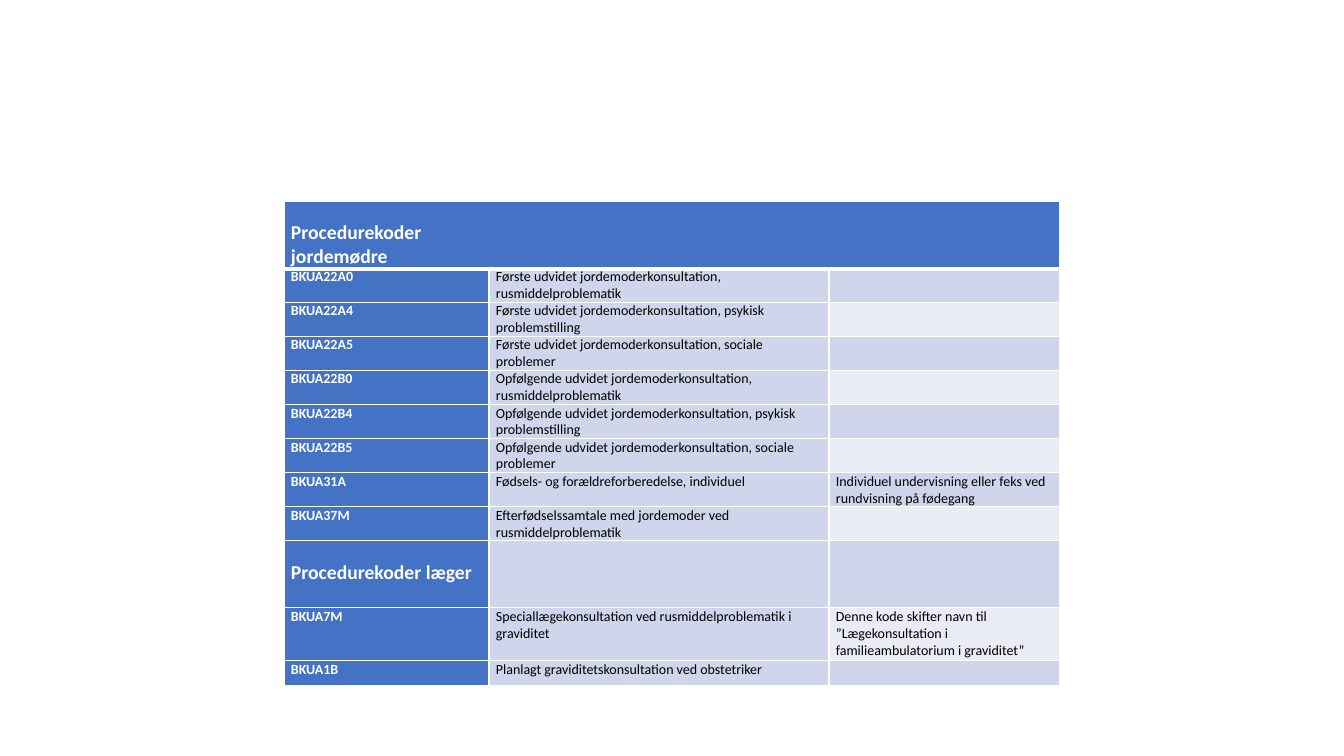
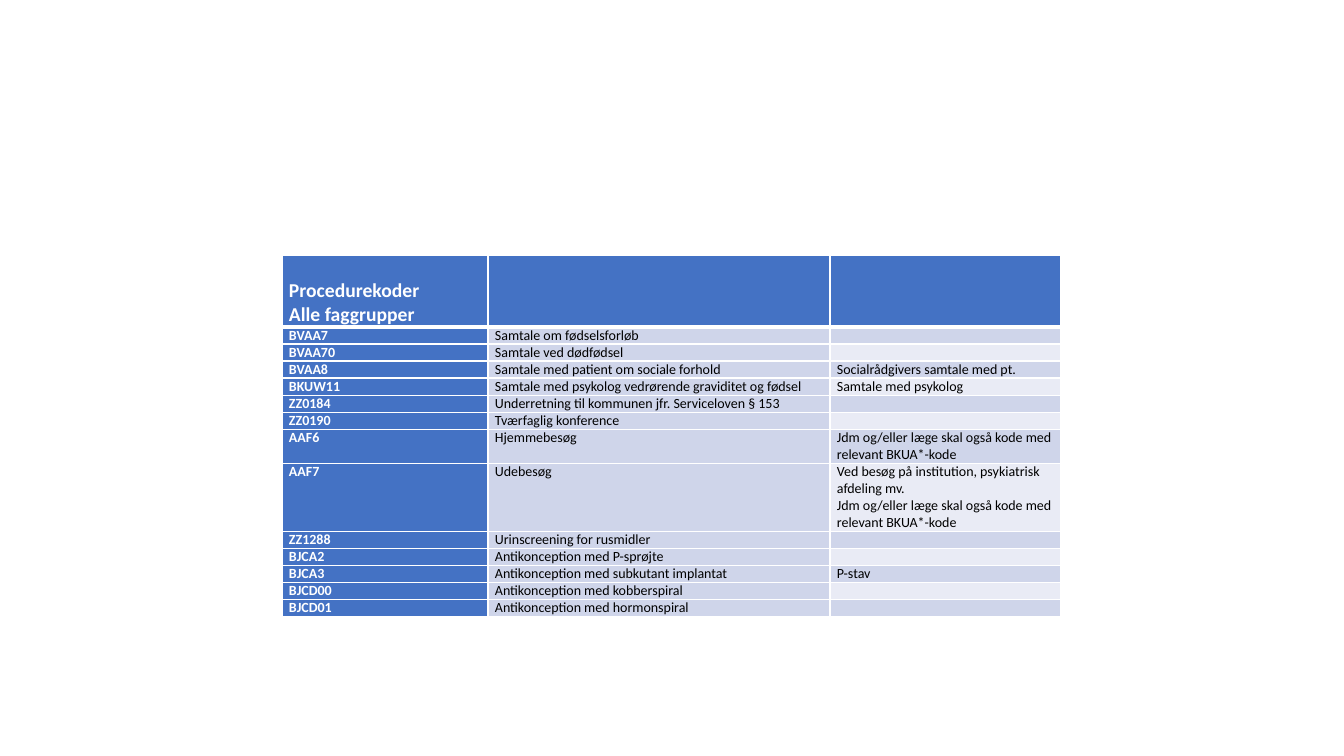
from lxml.etree import SubElement
from pptx import Presentation
from pptx.dml.color import RGBColor
from pptx.oxml.ns import qn
from pptx.util import Pt

EMU_PER_PX = 12192000 / 1344

MIDWIFE_AND_DOCTOR_CODES = [
    (67, "Procedurekoder\njordemødre", "", ""),
    (34, "BKUA22A0", "Første udvidet jordemoderkonsultation, rusmiddelproblematik", ""),
    (34, "BKUA22A4", "Første udvidet jordemoderkonsultation, psykisk problemstilling", ""),
    (34, "BKUA22A5", "Første udvidet jordemoderkonsultation, sociale problemer", ""),
    (34, "BKUA22B0", "Opfølgende udvidet jordemoderkonsultation, rusmiddelproblematik", ""),
    (34, "BKUA22B4", "Opfølgende udvidet jordemoderkonsultation, psykisk problemstilling", ""),
    (34, "BKUA22B5", "Opfølgende udvidet jordemoderkonsultation, sociale problemer", ""),
    (34, "BKUA31A", "Fødsels- og forældreforberedelse, individuel",
     "Individuel undervisning eller feks ved rundvisning på fødegang"),
    (34, "BKUA37M", "Efterfødselssamtale med jordemoder ved rusmiddelproblematik", ""),
    (67, "Procedurekoder læger", "", ""),
    (53, "BKUA7M", "Speciallægekonsultation ved rusmiddelproblematik i graviditet",
     "Denne kode skifter navn til ”Lægekonsultation i familieambulatorium i graviditet”"),
    (25, "BKUA1B", "Planlagt graviditetskonsultation ved obstetriker", ""),
]

ALL_STAFF_CODES = [
    (72, "Procedurekoder\nAlle faggrupper", "", ""),
    (17, "BVAA7", "Samtale om fødselsforløb", ""),
    (17, "BVAA70", "Samtale ved dødfødsel", ""),
    (17, "BVAA8", "Samtale med patient om sociale forhold", "Socialrådgivers samtale med pt."),
    (17, "BKUW11", "Samtale med psykolog vedrørende graviditet og fødsel", "Samtale med psykolog"),
    (17, "ZZ0184", "Underretning til kommunen jfr. Serviceloven § 153", ""),
    (17, "ZZ0190", "Tværfaglig konference", ""),
    (34, "AAF6", "Hjemmebesøg", "Jdm og/eller læge skal også kode med relevant BKUA*-kode"),
    (68, "AAF7", "Udebesøg",
     "Ved besøg på institution, psykiatrisk afdeling mv.\n"
     "Jdm og/eller læge skal også kode med relevant BKUA*-kode"),
    (17, "ZZ1288", "Urinscreening for rusmidler", ""),
    (17, "BJCA2", "Antikonception med P-sprøjte", ""),
    (17, "BJCA3", "Antikonception med subkutant implantat", "P-stav"),
    (17, "BJCD00", "Antikonception med kobberspiral", ""),
    (17, "BJCD01", "Antikonception med hormonspiral", ""),
]


def px(length):
    return round(length * EMU_PER_PX)


def color(hex_code):
    return RGBColor.from_string(hex_code)


class CodeDeck:
    FONT = "Calibri"
    BLUE, BAND, LIGHT_BAND = "4472C4", "CFD5EA", "E9EBF5"
    WHITE, BLACK = "FFFFFF", "000000"
    BODY_SIZE, HEADING_SIZE = 10, 14

    def __init__(self):
        self.deck = Presentation()
        self.deck.slide_width, self.deck.slide_height = px(1344), px(756)
        self.slide = None

    def add_slide(self):
        self.slide = self.deck.slides.add_slide(self.deck.slide_layouts[6])

    def add_code_table(self, left, top, widths, rows, heading_rows, heading_gap,
                       merge_header=False):
        """Draw a code list; heading_gap is the space above each heading."""
        heights = [row[0] for row in rows]
        table = self.slide.shapes.add_table(
            len(rows), len(widths), px(left), px(top),
            px(sum(widths)), px(sum(heights))).table
        table.horz_banding = False
        for column, width in zip(table.columns, widths):
            column.width = px(width)
        for row_index, (height, *texts) in enumerate(rows):
            table.rows[row_index].height = px(height)
            for column_index, text in enumerate(texts):
                cell = table.cell(row_index, column_index)
                is_heading = row_index in heading_rows and column_index == 0
                self.set_cell_text(cell, text, column_index == 0, is_heading)
                cell.margin_left = cell.margin_right = px(7)
                cell.margin_top = px(heading_gap if is_heading else 0)
                cell.margin_bottom = 0
                self.set_borders(cell, row_index)
                cell.fill.solid()
                cell.fill.fore_color.rgb = color(self.fill_for(row_index, column_index))
        if merge_header:
            table.cell(0, 0).merge(table.cell(0, len(widths) - 1))

    def fill_for(self, row_index, column_index):
        if row_index == 0 or column_index == 0:
            return self.BLUE
        is_light = column_index == 2 and row_index % 2 == 0
        return self.LIGHT_BAND if is_light else self.BAND

    def set_cell_text(self, cell, text, is_code, is_heading):
        size = self.HEADING_SIZE if is_heading else self.BODY_SIZE
        cell.text_frame.text = text
        for paragraph in cell.text_frame.paragraphs:
            for run in paragraph.runs:
                run.font.name = self.FONT
                run.font.size = Pt(size)
                run.font.bold = is_code
                run.font.color.rgb = color(self.WHITE if is_code else self.BLACK)
            if not text:
                # Keeps empty cells from stretching their row
                SubElement(paragraph._p, qn("a:endParaRPr"), sz=str(size * 100))

    def set_borders(self, cell, row_index):
        """Rule all sides in white, thicker between the header and the first row."""
        thick_side = {0: "B", 1: "T"}.get(row_index)
        properties = cell._tc.get_or_add_tcPr()
        for side in "LRTB":
            width = Pt(3 if side == thick_side else 1)
            border = SubElement(properties, qn(f"a:ln{side}"), w=str(width))
            fill = SubElement(border, qn("a:solidFill"))
            SubElement(fill, qn("a:srgbClr"), val=self.WHITE)

    def save(self):
        self.deck.save("out.pptx")


def main():
    deck = CodeDeck()
    deck.add_slide()
    deck.add_code_table(284, 201, (205, 340, 231), MIDWIFE_AND_DOCTOR_CODES,
                        heading_rows=(0, 9), heading_gap=20, merge_header=True)
    deck.add_slide()
    deck.add_code_table(282, 255, (206, 342, 231), ALL_STAFF_CODES,
                        heading_rows=(0,), heading_gap=24)
    deck.save()


if __name__ == "__main__":
    main()
